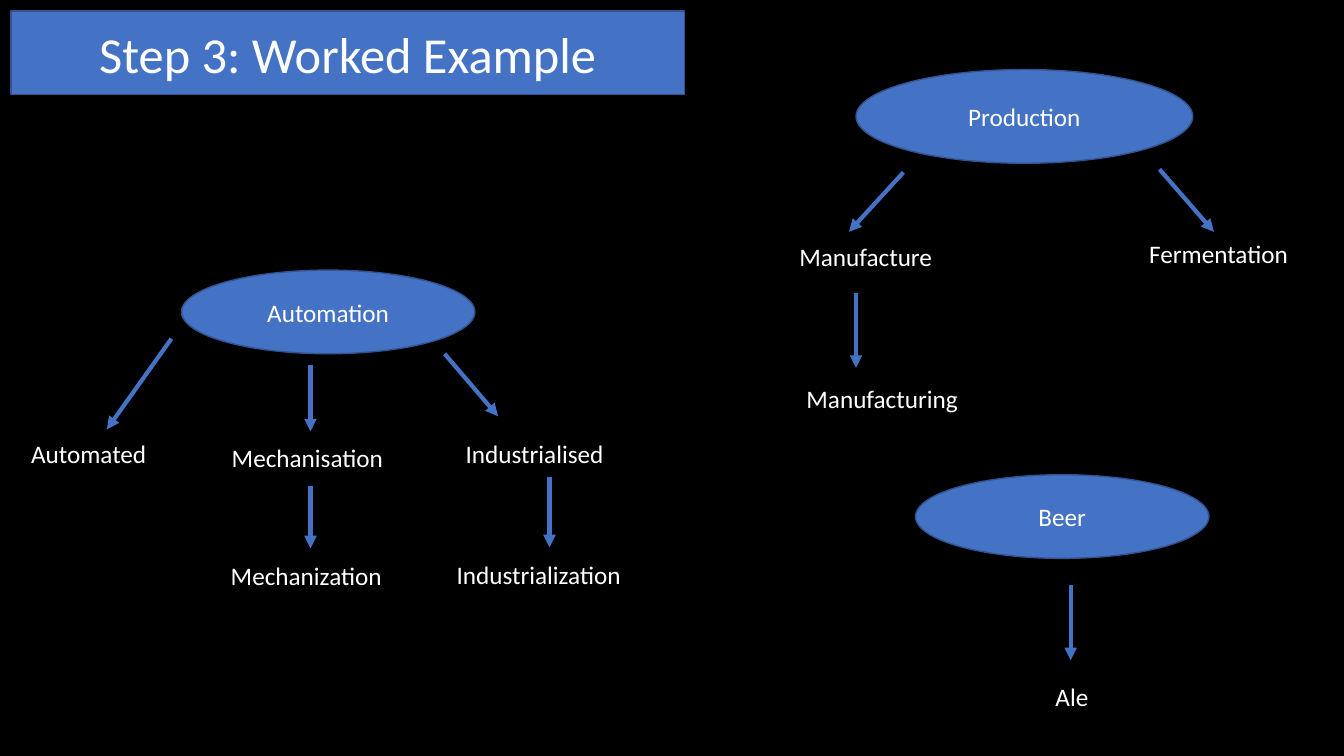
from dataclasses import dataclass

from lxml import etree
from pptx import Presentation
from pptx.dml.color import RGBColor as RGB
from pptx.enum.shapes import MSO_CONNECTOR as CONN, MSO_SHAPE as SHAPE
from pptx.enum.text import MSO_ANCHOR as ANCHOR, MSO_AUTO_SIZE as AUTO, PP_ALIGN as ALIGN
from pptx.oxml.ns import qn
from pptx.util import Inches, Pt


@dataclass(frozen=True)
class Theme:
    font: str = "Calibri"
    back: RGB = RGB(0, 0, 0)
    text: RGB = RGB(255, 255, 255)
    fill: RGB = RGB(0x44, 0x72, 0xC4)
    edge: RGB = RGB(0x32, 0x54, 0x91)
    title_size: int = 36
    body_size: int = 18


T = Theme()


def write(sp, text, size=T.body_size, align=ALIGN.LEFT, anchor=ANCHOR.TOP, auto=AUTO.NONE):
    tf = sp.text_frame
    tf.word_wrap = True
    tf.auto_size = auto
    tf.vertical_anchor = anchor
    p = tf.paragraphs[0]
    p.alignment = align
    r = p.add_run()
    r.text = text
    r.font.name = T.font
    r.font.size = Pt(size)
    r.font.color.rgb = T.text


def paint(sp):
    """Give a shape the blue fill and the thin darker outline."""
    sp.shadow.inherit = False
    sp.fill.solid()
    sp.fill.fore_color.rgb = T.fill
    sp.line.color.rgb = T.edge
    sp.line.width = Pt(1)


prs = Presentation()
prs.slide_width, prs.slide_height = Inches(13.33), Inches(7.5)
s = prs.slides.add_slide(prs.slide_layouts[5])
s.background.fill.solid()
s.background.fill.fore_color.rgb = T.back

# Title banner with rounded corners
title = s.shapes.title
title.left, title.top = Inches(0.11), Inches(0.11)
title.width, title.height = Inches(6.68), Inches(0.83)
geom = etree.SubElement(title.element.spPr, qn("a:prstGeom"), prst="roundRect")
etree.SubElement(geom, qn("a:avLst"))
paint(title)
write(title, "Step 3: Worked Example", size=T.title_size, align=ALIGN.CENTER, anchor=ANCHOR.MIDDLE)

# Root keywords: left, top, width, height
keywords = {
    "Automation": (1.8, 2.68, 2.91, 0.83),
    "Production": (8.49, 0.69, 3.34, 0.93),
    "Beer": (9.08, 4.71, 2.91, 0.83),
}
for word, box in keywords.items():
    sp = s.shapes.add_shape(SHAPE.OVAL, *map(Inches, box))
    paint(sp)
    write(sp, word, align=ALIGN.CENTER, anchor=ANCHOR.MIDDLE)

# Related words: left, top, width
related = {
    "Automated": (0.21, 4.3, 2.08),
    "Mechanisation": (2.2, 4.34, 2.91),
    "Industrialised": (4.52, 4.3, 1.98),
    "Mechanization": (2.19, 5.51, 2.69),
    "Industrialization": (4.43, 5.5, 2.16),
    "Manufacture": (7.83, 2.34, 2.71),
    "Fermentation": (11.3, 2.32, 1.63),
    "Manufacturing": (7.9, 3.75, 1.91),
    "Ale": (10.37, 6.71, 2.16),
}
for word, box in related.items():
    sp = s.shapes.add_textbox(*map(Inches, box), Inches(0.4))
    write(sp, word, auto=AUTO.SHAPE_TO_FIT_TEXT)

# Arrows: start x, start y, end x, end y
arrows = [
    (1.7, 3.36, 1.06, 4.26),
    (3.08, 3.62, 3.08, 4.28),
    (4.41, 3.51, 4.94, 4.13),
    (3.08, 4.82, 3.08, 5.44),
    (5.45, 4.73, 5.45, 5.43),
    (8.96, 1.71, 8.42, 2.3),
    (11.5, 1.68, 12.04, 2.3),
    (8.49, 2.91, 8.49, 3.65),
    (10.62, 5.8, 10.62, 6.55),
]
for ends in arrows:
    arrow = s.shapes.add_connector(CONN.STRAIGHT, *map(Inches, ends))
    arrow.line.color.rgb = T.fill
    arrow.line.width = Pt(3)
    etree.SubElement(arrow.line._get_or_add_ln(), qn("a:tailEnd"), type="triangle")
    etree.SubElement(arrow.element.spPr, qn("a:effectLst"))

prs.save("out.pptx")
